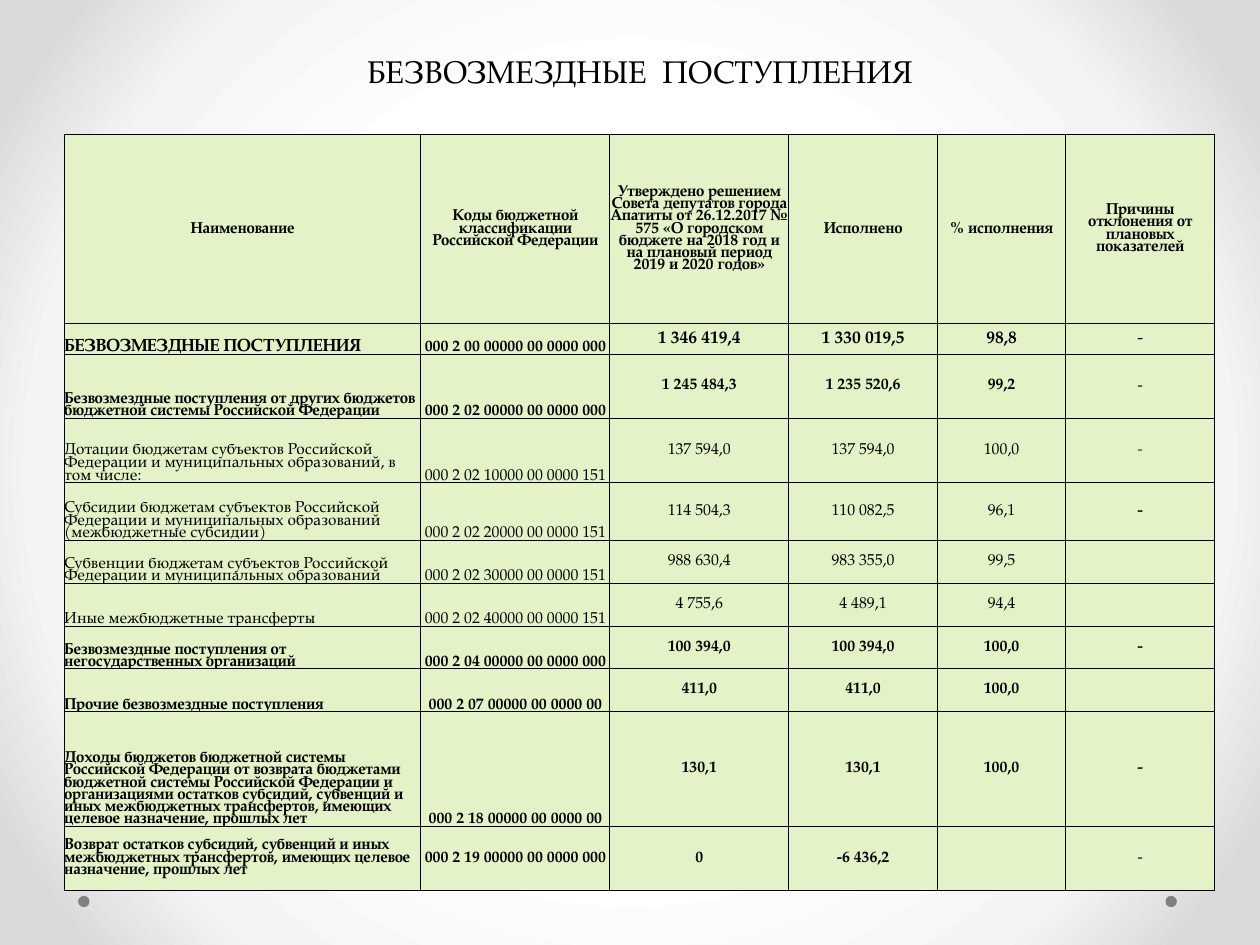
import pptx
import pptx.dml.color
import pptx.enum.shapes
import pptx.enum.text
import pptx.oxml
import pptx.oxml.ns
import pptx.util

RGBColor = pptx.dml.color.RGBColor
Inches = pptx.util.Inches
ALIGN = pptx.enum.text.PP_ALIGN
ANCHOR = pptx.enum.text.MSO_ANCHOR

BLACK = RGBColor(0x00, 0x00, 0x00)
GREY = RGBColor(0x80, 0x80, 0x80)
LIGHT_GREEN = RGBColor(0xE3, 0xF2, 0xC7)
BACKDROP = {50: RGBColor(0xFF, 0xFF, 0xFF), 76: RGBColor(0xF4, 0xF4, 0xF4),
            92: RGBColor(0xDA, 0xDA, 0xDA)}
FONT = "TeX Gyre Pagella"
NS = pptx.oxml.ns.nsdecls("a")

COLUMNS = [2.83, 1.5, 1.42, 1.18, 1.02, 1.18]
HEADINGS = [
    "Наименование",
    "Коды бюджетной классификации Российской Федерации",
    "Утверждено решением Совета депутатов города Апатиты от 26.12.2017 № 575 "
    "«О городском бюджете на 2018 год и на плановый период 2019 и 2020 годов»",
    "Исполнено",
    "% исполнения",
    "Причины отклонения от плановых показателей",
]
# height, bold row, (bold, italic) of the reason, cell texts
REVENUES = [
    (0.24, True, (False, False),
     ["БЕЗВОЗМЕЗДНЫЕ ПОСТУПЛЕНИЯ", "000 2 00 00000 00 0000 000",
      "1 346 419,4", "1 330 019,5", "98,8", "-"]),
    (0.51, True, (False, False),
     ["Безвозмездные поступления от других бюджетов бюджетной системы Российской Федерации",
      "000 2 02 00000 00 0000 000", "1 245 484,3", "1 235 520,6", "99,2", "-"]),
    (0.51, False, (False, True),
     ["Дотации бюджетам субъектов Российской Федерации и муниципальных образований, "
      "в том числе:",
      "000 2 02 10000 00 0000 151", "137 594,0", "137 594,0", "100,0", "-"]),
    (0.46, False, (True, True),
     ["Субсидии бюджетам субъектов Российской Федерации и муниципальных образований "
      "(межбюджетные субсидии)",
      "000 2 02 20000 00 0000 151", "114 504,3", "110 082,5", "96,1", "-"]),
    (0.34, False, (False, False),
     ["Субвенции бюджетам субъектов Российской Федерации и муниципальных образований",
      "000 2 02 30000 00 0000 151", "988 630,4", "983 355,0", "99,5", ""]),
    (0.34, False, (False, False),
     ["Иные межбюджетные трансферты",
      "000 2 02 40000 00 0000 151", "4 755,6", "4 489,1", "94,4", ""]),
    (0.34, True, (True, True),
     ["Безвозмездные поступления от негосударственных организаций",
      "000 2 04 00000 00 0000 000", "100 394,0", "100 394,0", "100,0", "-"]),
    (0.34, True, (False, False),
     ["Прочие безвозмездные поступления",
      "000 2 07 00000 00 0000 00", "411,0", "411,0", "100,0", ""]),
    (0.91, True, (True, True),
     ["Доходы бюджетов бюджетной системы Российской Федерации от возврата бюджетами "
      "бюджетной системы Российской Федерации и организациями остатков субсидий, "
      "субвенций и иных межбюджетных трансфертов, имеющих целевое назначение, прошлых лет",
      "000 2 18 00000 00 0000 00", "130,1", "130,1", "100,0", "-"]),
    (0.51, True, (False, False),
     ["Возврат остатков субсидий, субвенций и иных межбюджетных трансфертов, "
      "имеющих целевое назначение, прошлых лет",
      "000 2 19 00000 00 0000 000", "0", "-6 436,2", "", "-"]),
]
ROWS = [(1.5, True, (True, False), HEADINGS)] + REVENUES


def write(frame, text, align, size, bold=False, italic=False):
    paragraph = frame.paragraphs[0]
    paragraph.alignment = align
    run = paragraph.add_run()
    run.text = text
    style = {"name": FONT, "size": pptx.util.Pt(size), "bold": bold, "italic": italic}
    for key, value in style.items():
        setattr(run.font, key, value)
    run.font.color.rgb = BLACK
    return paragraph


def outline(cell):
    properties = cell._tc.get_or_add_tcPr()
    for place, side in enumerate(("lnL", "lnR", "lnT", "lnB")):
        properties.insert(place, pptx.oxml.parse_xml(
            f'<a:{side} {NS} w="6350"><a:solidFill><a:srgbClr val="{BLACK}"/>'
            f'</a:solidFill></a:{side}>'))


deck = pptx.Presentation()
deck.slide_width, deck.slide_height = Inches(10), Inches(7.5)
slide = deck.slides.add_slide(deck.slide_layouts[5])

# Radial backdrop
slide.background.fill.gradient()
gradient = slide._element.find(".//" + pptx.oxml.ns.qn("a:gradFill"))
stops = "".join(f'<a:gs pos="{share * 1000}"><a:srgbClr val="{color}"/></a:gs>'
                for share, color in BACKDROP.items())
gradient.getparent().replace(gradient, pptx.oxml.parse_xml(
    f'<a:gradFill {NS} rotWithShape="1"><a:gsLst>{stops}</a:gsLst><a:path path="circle">'
    '<a:fillToRect l="50000" t="50000" r="50000" b="50000"/></a:path></a:gradFill>'))

# Corner dots
for left in (9.25, 0.62):
    dot = slide.shapes.add_shape(pptx.enum.shapes.MSO_SHAPE.OVAL, Inches(left),
                                 Inches(7.11), Inches(0.09), Inches(0.09))
    dot.shadow.inherit = False
    dot.fill.solid()
    dot.fill.fore_color.rgb = GREY
    dot.line.fill.background()

# Title
title = slide.shapes.title
for key, value in {"left": 0.83, "top": 0.36, "width": 8.5, "height": 0.4}.items():
    setattr(title, key, Inches(value))
title.text_frame.vertical_anchor = ANCHOR.MIDDLE
write(title.text_frame, "БЕЗВОЗМЕЗДНЫЕ  ПОСТУПЛЕНИЯ", ALIGN.CENTER, 18)

# Revenue table
revenue = slide.shapes.add_table(
    len(ROWS), len(COLUMNS), Inches(0.51), Inches(1.07),
    Inches(sum(COLUMNS)), Inches(sum(row[0] for row in ROWS))).table
revenue.first_row = revenue.horz_banding = False
for column, width in zip(revenue.columns, COLUMNS):
    column.width = Inches(width)

for r, (height, row_bold, reason_style, texts) in enumerate(ROWS):
    revenue.rows[r].height = Inches(height)
    for c, text in enumerate(texts):
        cell = revenue.cell(r, c)
        cell.fill.solid()
        cell.fill.fore_color.rgb = LIGHT_GREEN
        outline(cell)
        low = c < 2 and 0 < r < len(ROWS) - 1
        layout = {"margin_left": 0, "margin_right": 0, "margin_top": 0, "margin_bottom": 0,
                  "vertical_anchor": ANCHOR.BOTTOM if low else ANCHOR.MIDDLE}
        for key, value in layout.items():
            setattr(cell, key, value)
        if text:
            bold, italic = reason_style if c == 5 else (row_bold, False)
            size = 10 if r == 1 and c != 1 else 9
            align = ALIGN.LEFT if r and c == 0 else ALIGN.CENTER
            paragraph = write(cell.text_frame, text, align, size, bold, italic)
            paragraph.line_spacing = 0.8

deck.save("out.pptx")
